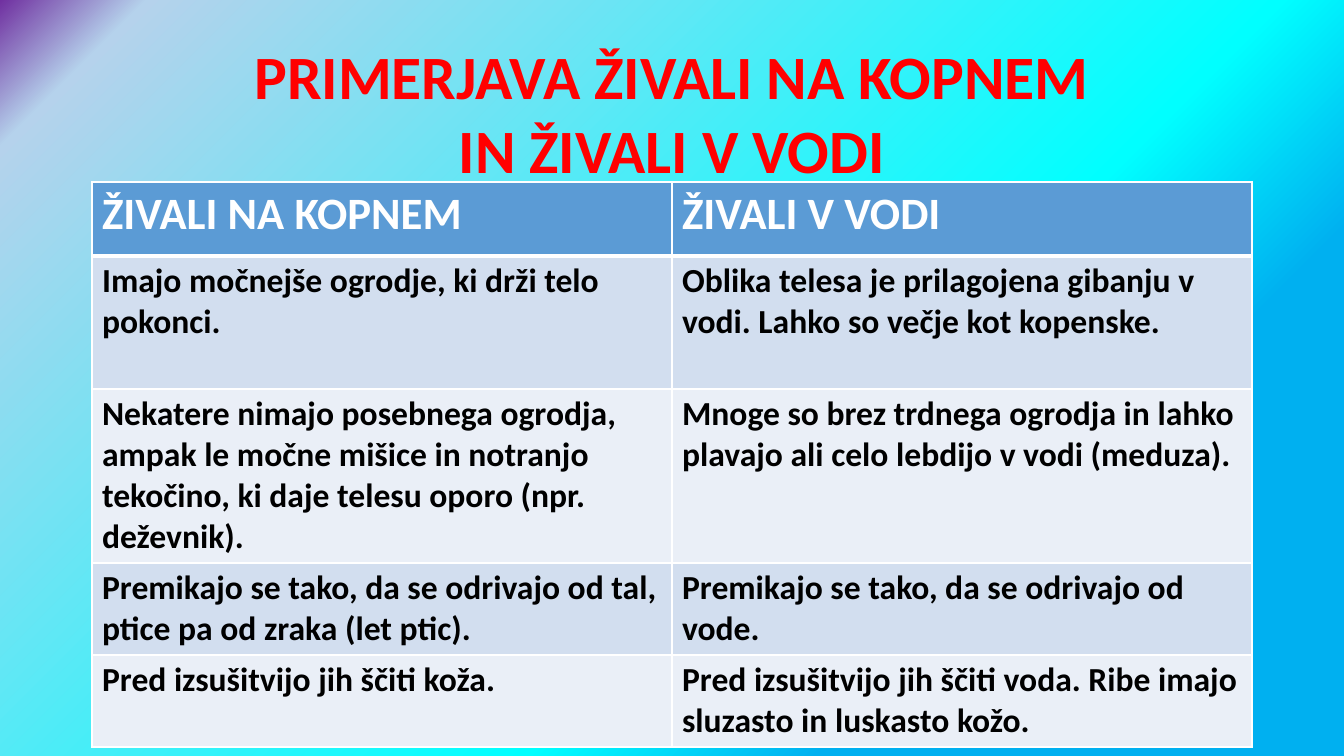
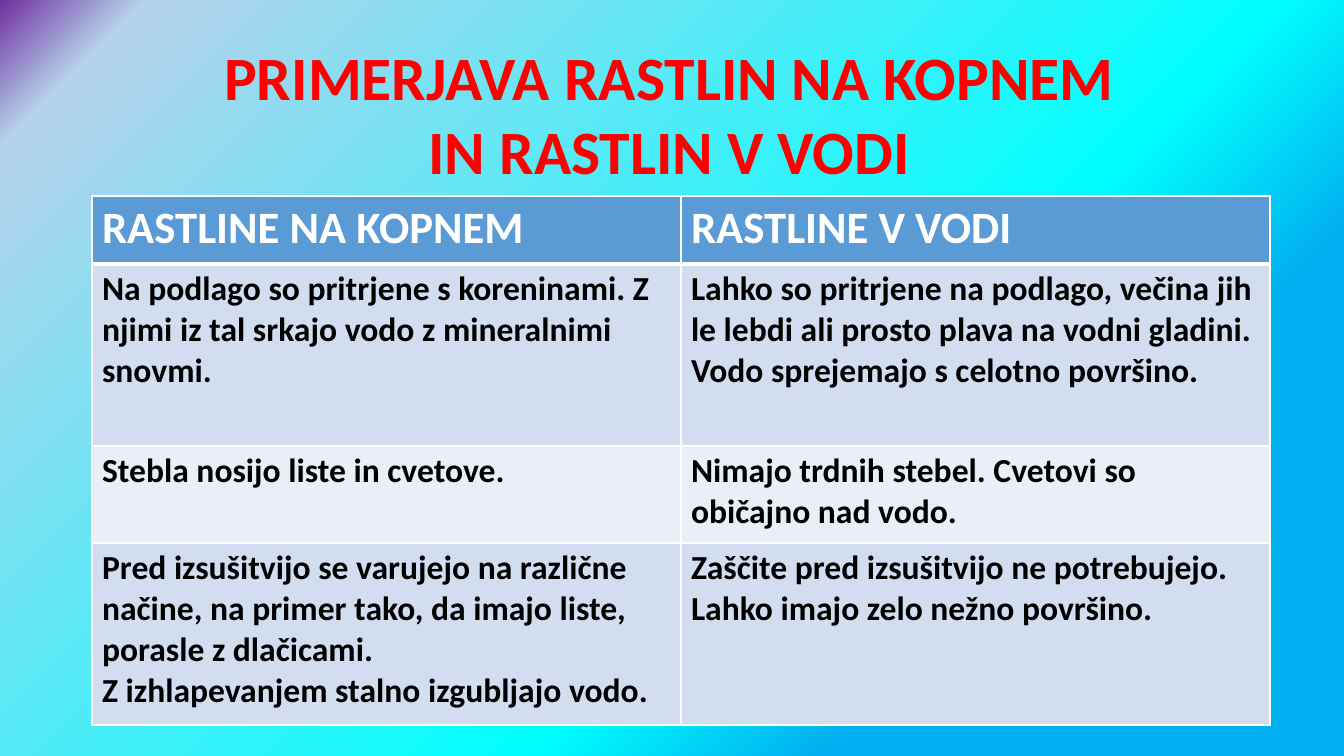
from copy import deepcopy

from lxml import etree
from pptx import Presentation
from pptx.dml.color import RGBColor
from pptx.enum.text import MSO_ANCHOR, PP_ALIGN
from pptx.oxml.ns import qn
from pptx.util import Emu, Pt

MIDDLE = MSO_ANCHOR.MIDDLE
CENTER = PP_ALIGN.CENTER

RED = RGBColor(0xFF, 0x00, 0x00)
WHITE = RGBColor(0xFF, 0xFF, 0xFF)
BLACK = RGBColor(0x00, 0x00, 0x00)
HEADER = RGBColor(0x5B, 0x9B, 0xD5)
BANDS = [RGBColor(0xEA, 0xEF, 0xF7), RGBColor(0xD2, 0xDE, 0xEF)]
GRADIENT = [
    (0, RGBColor(0x70, 0x30, 0xA0)),
    (0.07, RGBColor(0xB5, 0xD2, 0xEC)),
    (0.61, RGBColor(0x00, 0xFF, 0xFF)),
    (0.75, RGBColor(0x00, 0xB0, 0xF0)),
]

TITLE_FONT = {"name": "Calibri", "size": Pt(44), "bold": True}
HEAD_FONT = {"name": "Calibri", "size": Pt(32), "bold": True}
BODY_FONT = {"name": "Calibri", "size": Pt(24), "bold": True}

PX = 914400 / 100.8


def px(n):
    return Emu(round(n * PX))


def style_text(tf, font, color):
    for p in tf.paragraphs:
        for r in p.runs:
            for name, value in font.items():
                setattr(r.font, name, value)
            r.font.color.rgb = color


# Boxes are left, top, width, height; \v breaks a line, \n a paragraph
SLIDES = [
    {
        "title": "PRIMERJAVA ŽIVALI NA KOPNEM\vIN ŽIVALI V VODI",
        "title_box": (92, 11, 1160, 202),
        "table_at": (92, 182),
        "col_width": 580,
        "row_heights": [74, 133, 174, 92, 92],
        "rows": [
            ("ŽIVALI NA KOPNEM", "ŽIVALI V VODI"),
            ("Imajo močnejše ogrodje, ki drži telo pokonci.",
             "Oblika telesa je prilagojena gibanju v vodi. "
             "Lahko so večje kot kopenske."),
            ("Nekatere nimajo posebnega ogrodja, ampak le močne mišice in "
             "notranjo tekočino, ki daje telesu oporo (npr. deževnik).",
             "Mnoge so brez trdnega ogrodja in lahko plavajo ali celo "
             "lebdijo v vodi (meduza)."),
            ("Premikajo se tako, da se odrivajo od tal, ptice pa od zraka "
             "(let ptic).",
             "Premikajo se tako, da se odrivajo od vode."),
            ("Pred izsušitvijo jih ščiti koža.",
             "Pred izsušitvijo jih ščiti voda. Ribe imajo sluzasto in "
             "luskasto kožo."),
        ],
    },
    {
        "title": "PRIMERJAVA RASTLIN NA KOPNEM\vIN RASTLIN V VODI",
        "title_box": (29, 11, 1281, 203),
        "table_at": (92, 196),
        "col_width": 589,
        "row_heights": [68, 182, 97, 182],
        "rows": [
            ("RASTLINE NA KOPNEM", "RASTLINE V VODI"),
            ("Na podlago so pritrjene s koreninami. Z njimi iz tal srkajo "
             "vodo z mineralnimi snovmi.",
             "Lahko so pritrjene na podlago, večina jih le lebdi ali prosto "
             "plava na vodni gladini.\nVodo sprejemajo s celotno površino."),
            ("Stebla nosijo liste in cvetove.",
             "Nimajo trdnih stebel. Cvetovi so običajno nad vodo."),
            ("Pred izsušitvijo se varujejo na različne načine, na primer "
             "tako, da imajo liste, porasle z dlačicami.\n"
             "Z izhlapevanjem stalno izgubljajo vodo.",
             "Zaščite pred izsušitvijo ne potrebujejo.\n"
             "Lahko imajo zelo nežno površino."),
        ],
    },
]

prs = Presentation()
prs.slide_width, prs.slide_height = px(1344), px(756)

# Shared gradient background, on the master
master = prs.slide_master
fill = master.background.fill
fill.gradient()
fill.gradient_angle = 315
stop_list = master.element.find(".//" + qn("a:gsLst"))
while len(stop_list) < len(GRADIENT):
    stop_list.append(deepcopy(stop_list[0]))
for stop, (position, color) in zip(fill.gradient_stops, GRADIENT):
    stop.position = position
    stop.color.rgb = color

for content in SLIDES:
    s = prs.slides.add_slide(prs.slide_layouts[6])

    # Title
    sp = s.shapes.add_textbox(*map(px, content["title_box"]))
    tf = sp.text_frame
    tf.word_wrap = True
    tf.vertical_anchor = MIDDLE
    p = tf.paragraphs[0]
    p.text = content["title"]
    p.alignment = CENTER
    style_text(tf, TITLE_FONT, RED)

    # Comparison table
    rows, heights = content["rows"], content["row_heights"]
    left, top = content["table_at"]
    width = content["col_width"]
    table = s.shapes.add_table(len(rows), 2, px(left), px(top),
                               px(2 * width), px(sum(heights))).table
    table.horz_banding = False
    for col in table.columns:
        col.width = px(width)
    for i, (texts, height) in enumerate(zip(rows, heights)):
        table.rows[i].height = px(height)
        for j, text in enumerate(texts):
            cell = table.cell(i, j)
            cell.text = text
            cell.fill.solid()
            cell.fill.fore_color.rgb = BANDS[i % 2] if i else HEADER
            style_text(cell.text_frame, BODY_FONT if i else HEAD_FONT,
                       BLACK if i else WHITE)

            # White borders, thick under the header
            tc_pr = cell._tc.get_or_add_tcPr()
            for k, side in enumerate("LRTB"):
                thick = (i, side) in ((0, "B"), (1, "T"))
                ln = etree.Element(qn("a:ln" + side), w=str(Pt(3 if thick else 1)))
                solid = etree.SubElement(ln, qn("a:solidFill"))
                etree.SubElement(solid, qn("a:srgbClr"), val=str(WHITE))
                tc_pr.insert(k, ln)

prs.save("out.pptx")
